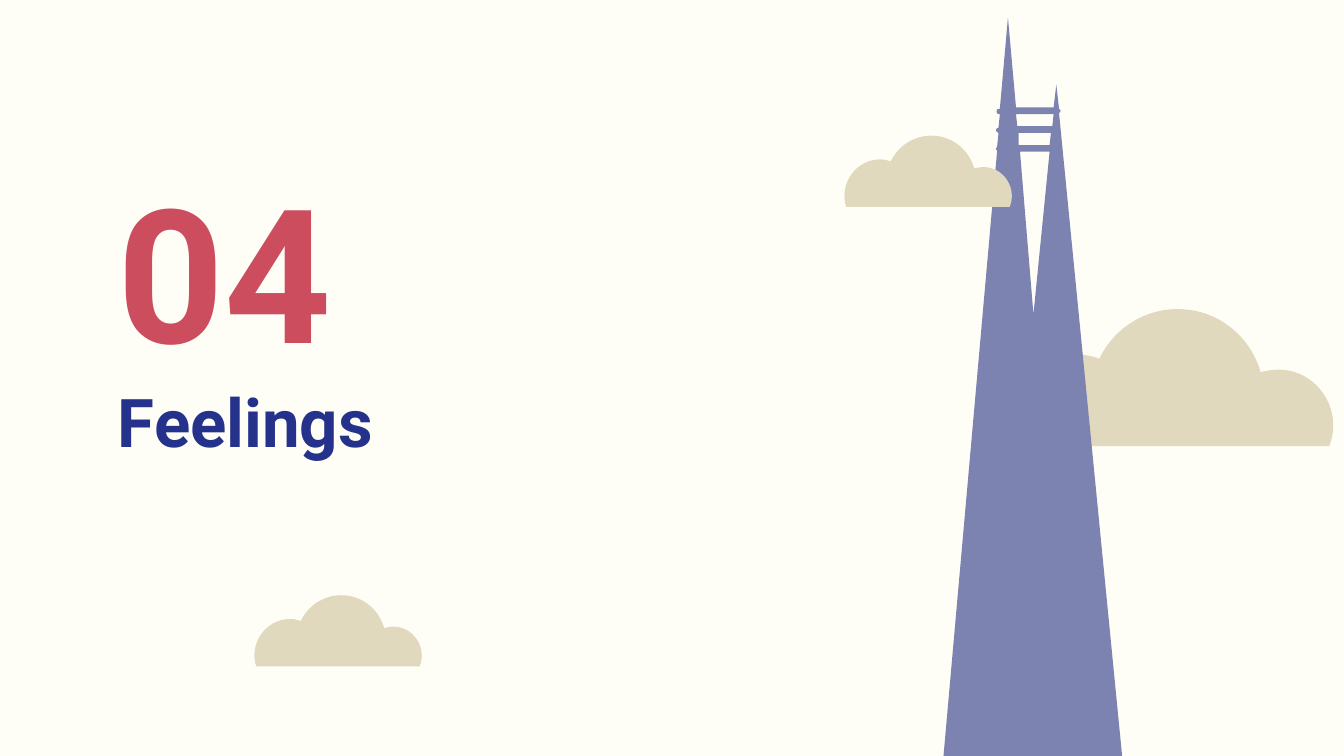
from dataclasses import dataclass

from lxml.etree import SubElement
from pptx import Presentation
from pptx.dml.color import RGBColor as RGB
from pptx.enum.text import MSO_ANCHOR as Anchor
from pptx.oxml.ns import qn
from pptx.util import Cm, Pt


@dataclass(frozen=True)
class Theme:
    font: str = "Roboto"
    paper: RGB = RGB(0xFF, 0xFE, 0xF6)
    cloud: RGB = RGB(0xE1, 0xD9, 0xBE)
    tower: RGB = RGB(0x7D, 0x83, 0xB0)
    number: RGB = RGB(0xCB, 0x4D, 0x5E)
    title: RGB = RGB(0x25, 0x32, 0x8C)
    number_size: Pt = Pt(100)
    title_size: Pt = Pt(36)


@dataclass(frozen=True)
class Box:
    x: float
    y: float
    w: float
    h: float


@dataclass(frozen=True)
class Label:
    text: str
    box: Box
    size: Pt
    color: RGB


# A step with one point is a line, one with three points a cubic curve
Point = tuple[float, float]
Step = list[Point]
Contour = list[Step]
THEME = Theme()


def inch(value: float) -> Cm:
    return Cm(value * 2.54)


def lines(*points: Point) -> Contour:
    return [[point] for point in points]


# Cloud outline on a 257 x 102 grid
CLOUD_GRID = (257, 102)
CLOUD: Contour = [
    [(133, 0)],
    [(109, 0), (86, 14), (75, 37)],
    [(70, 35), (65, 34), (60, 34)],
    [(25, 34), (0, 69), (11, 102)],
    [(246, 102)],
    [(257, 75), (237, 45), (208, 45)],
    [(204, 45), (199, 46), (195, 47)],
    [(188, 22), (166, 2.5), (139, 0.3)],
    [(137, 0.1), (135, 0), (133, 0)],
]
BACK_CLOUD = Box(7.43, 2.3, 2.57, 1.02)
FRONT_CLOUDS = [Box(6.24, 1.01, 1.33, 0.53), Box(1.85, 4.43, 1.33, 0.53)]

# Openings between the spires, then the tower outline
TOWER: list[Contour] = [
    lines((7.84, 0.85), (7.83, 0.94), (7.57, 0.94), (7.56, 0.85)),
    lines((7.82, 0.99), (7.81, 1.08), (7.58, 1.08), (7.58, 0.99)),
    lines((7.81, 1.13), (7.69, 2.34), (7.59, 1.13)),
    [
        *lines((7.5, 0.13), (7.44, 0.81)),
        [(7.43, 0.81), (7.43, 0.81), (7.43, 0.81)],
        [(7.41, 0.81), (7.41, 0.85), (7.43, 0.85)],
        [(7.43, 0.85), (7.43, 0.85), (7.44, 0.85)],
        [(7.43, 0.95)],
        [(7.42, 0.95), (7.41, 0.96), (7.41, 0.97)],
        [(7.41, 0.98), (7.42, 0.98), (7.43, 0.99)],
        [(7.42, 1.09)],
        [(7.42, 1.1), (7.41, 1.1), (7.41, 1.11)],
        [(7.41, 1.11), (7.42, 1.11), (7.42, 1.12)],
        *lines((7.02, 5.63), (8.35, 5.63), (7.88, 0.84)),
        [(7.9, 0.84), (7.89, 0.81), (7.88, 0.81)],
        *lines((7.86, 0.63), (7.84, 0.8), (7.56, 0.8), (7.5, 0.13)),
    ],
]

LABELS = [
    Label("Feelings", Box(0.78, 2.67, 5.54, 0.92), THEME.title_size, THEME.title),
    Label("04", Box(0.78, 1.42, 2.5, 1.16), THEME.number_size, THEME.number),
]


def place_cloud(box: Box) -> Contour:
    kx, ky = box.w / CLOUD_GRID[0], box.h / CLOUD_GRID[1]
    return [[(box.x + x * kx, box.y + y * ky) for x, y in step] for step in CLOUD]


def bend(sp, contours: list[Contour]) -> None:
    """Merge the three segments of each curve step into one cubic."""
    segments = iter(list(sp.element.iter(qn("a:lnTo"))))
    for contour in contours:
        for step in contour[1:]:
            group = [next(segments) for _ in step]
            if len(group) == 3:
                curve = SubElement(group[0].getparent(), qn("a:cubicBezTo"))
                group[0].addprevious(curve)
                for segment in group:
                    curve.append(segment[0])
                    segment.getparent().remove(segment)


def draw_outline(s, contours: list[Contour], color: RGB) -> None:
    paths = [[(inch(x), inch(y)) for step in c for x, y in step] for c in contours]
    builder = s.shapes.build_freeform(*paths[0][0])
    for i, points in enumerate(paths):
        if i:
            builder.move_to(*points[0])
        builder.add_line_segments(points[1:], close=True)
    sp = builder.convert_to_shape()
    bend(sp, contours)
    sp.shadow.inherit = False
    sp.fill.solid()
    sp.fill.fore_color.rgb = color
    sp.line.fill.background()


def draw_label(s, label: Label) -> None:
    b = label.box
    tf = s.shapes.add_textbox(inch(b.x), inch(b.y), inch(b.w), inch(b.h)).text_frame
    tf.word_wrap = True
    tf.vertical_anchor = Anchor.MIDDLE
    tf.margin_left = tf.margin_right = tf.margin_top = tf.margin_bottom = inch(0.1)
    r = tf.paragraphs[0].add_run()
    r.text = label.text
    r.font.name = THEME.font
    r.font.size = label.size
    r.font.bold = True
    r.font.color.rgb = label.color


def main() -> None:
    prs = Presentation()
    prs.slide_width, prs.slide_height = Cm(25.4), Cm(14.29)
    s = prs.slides.add_slide(prs.slide_layouts[6])
    s.background.fill.solid()
    s.background.fill.fore_color.rgb = THEME.paper

    # Scenery, from back to front
    draw_outline(s, [place_cloud(BACK_CLOUD)], THEME.cloud)
    draw_outline(s, TOWER, THEME.tower)
    for box in FRONT_CLOUDS:
        draw_outline(s, [place_cloud(box)], THEME.cloud)

    # Section title and number
    for label in LABELS:
        draw_label(s, label)

    prs.save("out.pptx")


if __name__ == "__main__":
    main()
